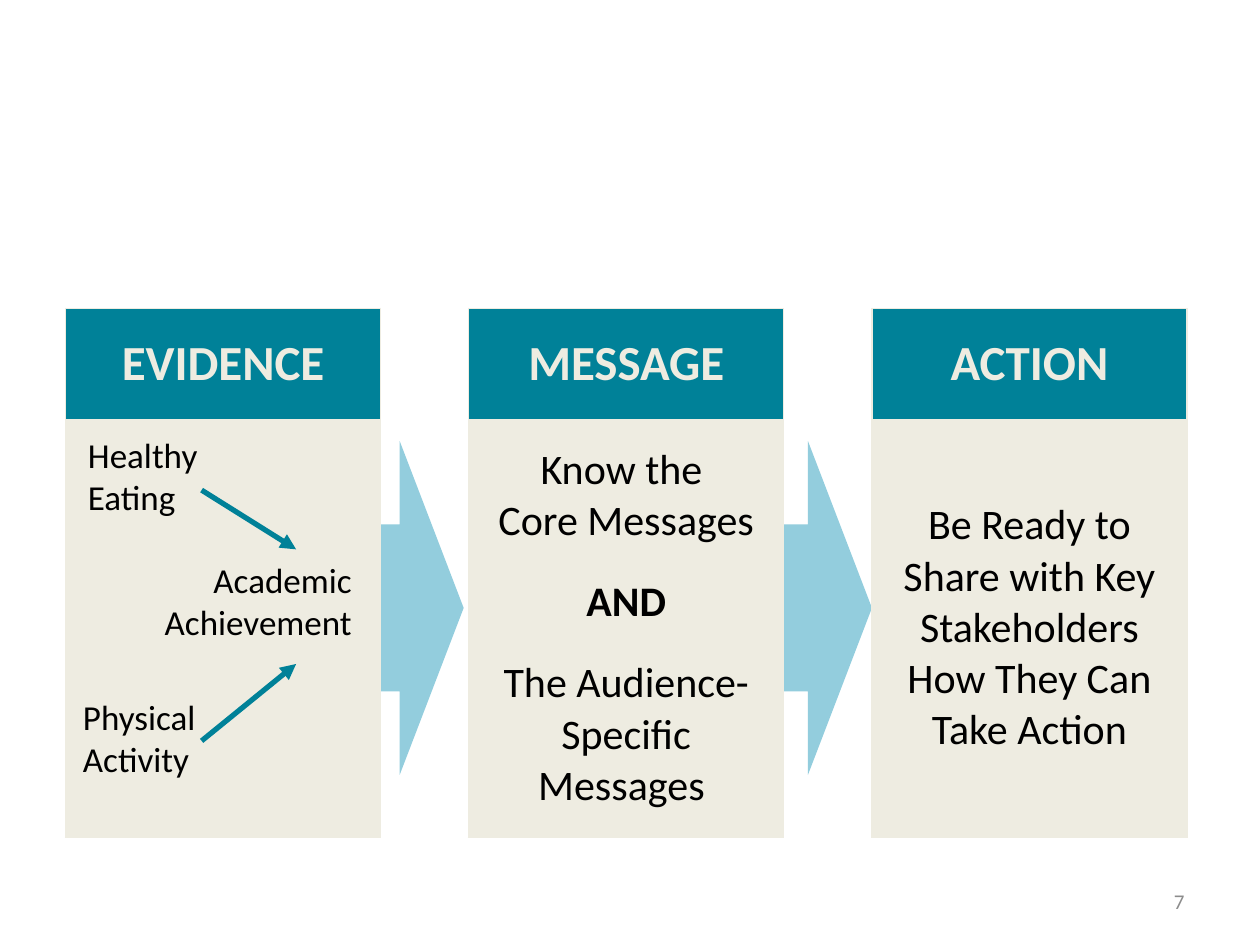
from lxml.etree import SubElement
from pptx import Presentation
from pptx.dml.color import RGBColor
from pptx.enum.shapes import MSO_CONNECTOR, MSO_SHAPE
from pptx.enum.text import MSO_ANCHOR as ANCHOR, PP_ALIGN as ALIGN
from pptx.oxml.ns import qn
from pptx.util import Inches, Pt

TEAL, CREAM, SKY, BLACK, GREY = "008198", "EEECE1", "93CDDD", "000000", "8C8C8C"
NO_STYLE = "{2D5ABB26-0587-4C30-8999-92F81FD0307C}"

COLUMNS = [
    ("EVIDENCE", []),
    ("MESSAGE", ["Know the ", "Core Messages", "AND", "The Audience-Specific", "Messages "]),
    ("ACTION", ["Be Ready to Share with Key Stakeholders How They Can Take Action"]),
]
SPACED = ("AND", "The Audience-Specific")
LABELS = [
    ("Healthy Eating", 0.6, 3.39, 1.33, 0.77, 20, BLACK, ALIGN.LEFT),
    ("Physical Activity", 0.56, 5.47, 1.41, 0.77, 20, BLACK, ALIGN.LEFT),
    ("Academic Achievement", 0.6, 4.38, 2.29, 0.77, 20, BLACK, ALIGN.RIGHT),
    ("7", 7.17, 6.95, 2.33, 0.4, 12, GREY, ALIGN.RIGHT),
]
LINKS = [(1.6, 3.89, 2.35, 4.36), (1.6, 5.88, 2.35, 5.27)]
ARROW_LEFTS = [1.93, 5.17]
COL_W, GAP_W = 2.5, 0.7
HEAD_H, BODY_H = 0.87, 3.32


def rgb(color):
    return RGBColor.from_string(color)


def style(p, size, color, align, bold=False):
    p.alignment = align
    for r in p.runs:
        r.font.name = "Calibri"
        r.font.size = Pt(size)
        r.font.bold = bold
        r.font.color.rgb = rgb(color)


def fill_cell(cell, color, sides):
    tcPr = cell._tc.get_or_add_tcPr()
    for side in sides:
        ln = SubElement(tcPr, qn(f"a:ln{side}"), w=str(Pt(1)))
        SubElement(SubElement(ln, qn("a:solidFill")), qn("a:srgbClr"), val=CREAM)
    cell.fill.solid()
    cell.fill.fore_color.rgb = rgb(color)
    cell.vertical_anchor = ANCHOR.MIDDLE
    cell.margin_top = cell.margin_bottom = Inches(0.2)


def add_arrow(s, left):
    sp = s.shapes.add_shape(MSO_SHAPE.RIGHT_ARROW, Inches(left), Inches(3.5), Inches(1.75), Inches(2.65))
    sp.adjustments[0], sp.adjustments[1] = 0.5, 0.29
    sp.shadow.inherit = False
    sp.fill.solid()
    sp.fill.fore_color.rgb = rgb(SKY)
    sp.line.fill.background()


def add_columns(s):
    count = 2 * len(COLUMNS) - 1
    width = len(COLUMNS) * COL_W + (len(COLUMNS) - 1) * GAP_W
    table = s.shapes.add_table(2, count, Inches(0.52), Inches(2.45), Inches(width), Inches(HEAD_H + BODY_H)).table
    table.first_row = table.horz_banding = False
    table._tbl.tblPr.find(qn("a:tableStyleId")).text = NO_STYLE
    for i, col in enumerate(table.columns):
        col.width = Inches(GAP_W if i % 2 else COL_W)
    for row, height in zip(table.rows, (HEAD_H, BODY_H)):
        row.height = Inches(height)
    for i, (heading, lines) in enumerate(COLUMNS):
        head, body = table.cell(0, 2 * i), table.cell(1, 2 * i)
        fill_cell(head, TEAL, "LRT")
        fill_cell(body, CREAM, "LRB")
        head.text_frame.text = heading
        style(head.text_frame.paragraphs[0], 28, CREAM, ALIGN.CENTER, True)
        body.text_frame.text = "\n".join(lines)
        for p in body.text_frame.paragraphs:
            style(p, 24, BLACK, ALIGN.CENTER, p.text == "AND")
            if p.text in SPACED:
                p.space_before = Pt(17)


def add_label(s, text, left, top, width, height, size, color, align):
    tf = s.shapes.add_textbox(Inches(left), Inches(top), Inches(width), Inches(height)).text_frame
    tf.word_wrap = True
    tf.vertical_anchor = ANCHOR.MIDDLE
    tf.text = text
    style(tf.paragraphs[0], size, color, align)


def add_link(s, *ends):
    cn = s.shapes.add_connector(MSO_CONNECTOR.STRAIGHT, *map(Inches, ends))
    cn.line.color.rgb = rgb(TEAL)
    cn.line.width = Pt(3)
    SubElement(cn.line._get_or_add_ln(), qn("a:tailEnd"), type="triangle")
    SubElement(cn._element.spPr, qn("a:effectLst"))


def main():
    prs = Presentation()
    prs.slide_width, prs.slide_height = Inches(10), Inches(7.5)
    s = prs.slides.add_slide(prs.slide_layouts[6])
    for left in ARROW_LEFTS:
        add_arrow(s, left)
    add_columns(s)
    for label in LABELS:
        add_label(s, *label)
    for link in LINKS:
        add_link(s, *link)
    prs.save("out.pptx")


if __name__ == "__main__":
    main()
